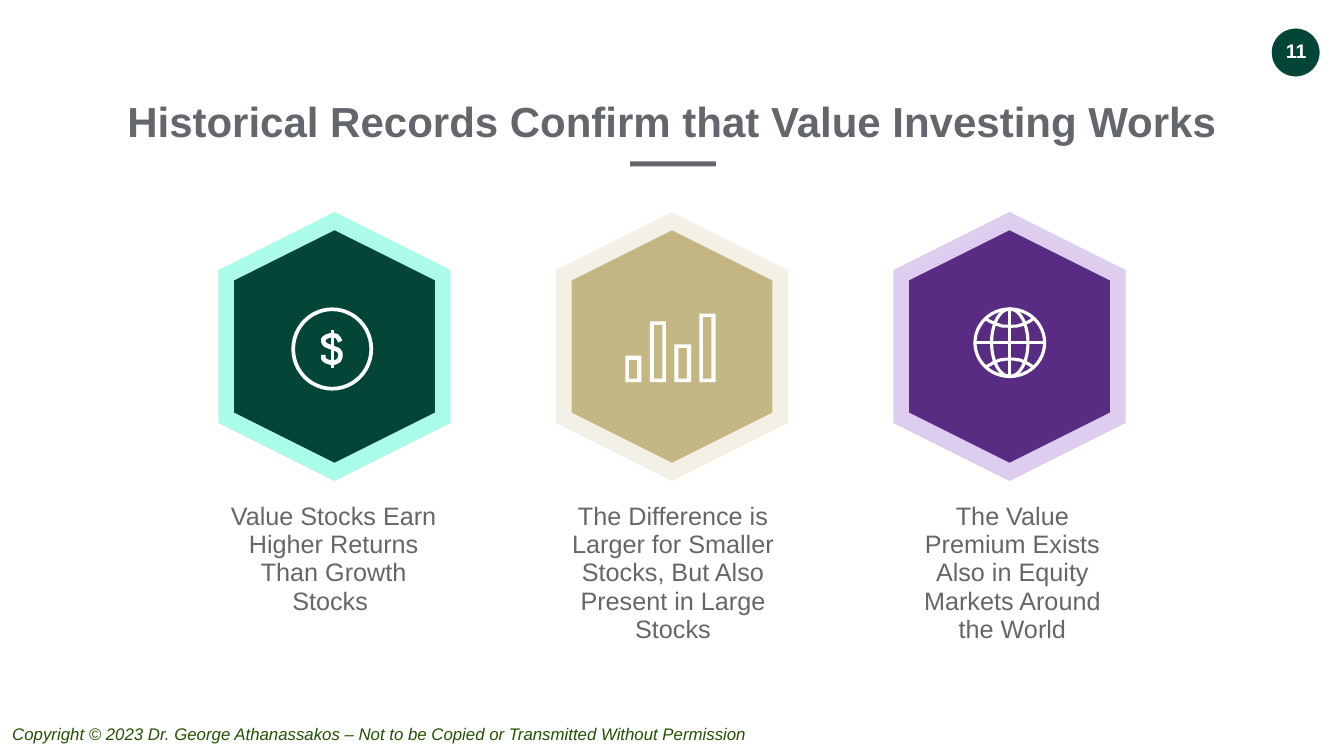
from dataclasses import dataclass
from lxml import etree
from pptx import Presentation
from pptx.dml.color import RGBColor
from pptx.enum.shapes import MSO_CONNECTOR, MSO_SHAPE
from pptx.enum.text import PP_ALIGN
from pptx.oxml.ns import qn
from pptx.util import Pt


@dataclass(frozen=True)
class Theme:
    font: str = "Arial"
    gray: str = "63666A"
    green: str = "034638"
    white: str = "FFFFFF"
    footer: str = "235001"
    title_size: int = 60
    body_size: int = 36
    number_size: int = 28
    footer_size: int = 24


THEME = Theme()

# Content
TITLE = "Historical Records Confirm that Value Investing Works"
PAGE_NUMBER = "11"
FOOTER = ("Copyright © 2023 Dr. George Athanassakos – "
          "Not to be Copied or Transmitted Without Permission")
# (caption, hexagon colour, border colour)
COLUMNS = [
    ("Value Stocks Earn Higher Returns Than Growth Stocks ", THEME.green, "ABFBEB"),
    ("The Difference is Larger for Smaller Stocks, But Also Present in Large Stocks",
     "C5B783", "F3F1E6"),
    ("The Value Premium Exists Also in Equity Markets Around the World",
     "582C83", "DECDEE"),
]

# Layout in points
SLIDE_WIDTH, SLIDE_HEIGHT = 1919.5, 1080
MIDDLE = SLIDE_WIDTH / 2
HEXAGON_PITCH, HEXAGON_CENTER_Y = 482, 495
OUTER_HEXAGON, INNER_HEXAGON = (384.5, 332), (332, 286.5)  # before rotation
CAPTION_PITCH, CAPTION_MIDDLE, CAPTION_TOP = 484.7, 961.2, 708.5
CAPTION_WIDTH, CAPTION_HEIGHT = 343.5, 219.5

# Icon geometry in points
BAR_TOPS, BAR_BOTTOM = [508.3, 458.6, 491.8, 447.8], 546.5
BAR_LEFT, BAR_PITCH, BAR_WIDTH, BAR_STROKE = 892.8, 35.3, 23.3, 5.6
DOLLAR_CURVE = [  # offsets from the coin centre
    (11, -11), (10, -15), (6.5, -18.5), (2, -20), (-3, -20), (-8.5, -18),
    (-12, -14.5), (-12, -10), (-9.5, -6), (-4, -3.5), (3, -1), (8.5, 1.5),
    (11.7, 5.5), (11.7, 11), (9, 16), (4, 19), (-2, 19.5), (-8, 17.5),
    (-12, 14), (-12.7, 8.5)]

presentation = Presentation()
presentation.slide_width = Pt(SLIDE_WIDTH)
presentation.slide_height = Pt(SLIDE_HEIGHT)
slide = presentation.slides.add_slide(presentation.slide_layouts[6])
shapes = slide.shapes


def paint(shape, fill=None, stroke=None, weight=1):
    shape.shadow.inherit = False
    if fill:
        shape.fill.solid()
        shape.fill.fore_color.rgb = RGBColor.from_string(fill)
    else:
        shape.fill.background()
    if stroke:
        shape.line.color.rgb = RGBColor.from_string(stroke)
        shape.line.width = Pt(weight)
    else:
        shape.line.fill.background()


def add_centered(kind, center_x, center_y, width, height, **style):
    shape = shapes.add_shape(kind, Pt(center_x - width / 2), Pt(center_y - height / 2),
                             Pt(width), Pt(height))
    paint(shape, **style)
    return shape


def add_line(x1, y1, x2, y2, weight):
    line = shapes.add_connector(MSO_CONNECTOR.STRAIGHT, Pt(x1), Pt(y1), Pt(x2), Pt(y2))
    line.line.color.rgb = RGBColor.from_string(THEME.white)
    line.line.width = Pt(weight)
    etree.SubElement(line._element.spPr, qn("a:effectLst"))


def add_outline(contours, close=False, **style):
    builder = shapes.build_freeform(*contours[0][0], scale=float(Pt(1)))
    for index, points in enumerate(contours):
        if index:
            builder.move_to(*points[0])
        builder.add_line_segments(points[1:], close=close)
    paint(builder.convert_to_shape(), **style)


def add_text(text, box, size, color, align=PP_ALIGN.CENTER, insets=(7.2, 3.6),
             wrap=True, bold=False, italic=False, spacing=None):
    frame = shapes.add_textbox(*map(Pt, box)).text_frame
    frame.word_wrap = wrap
    frame.margin_left = frame.margin_right = Pt(insets[0])
    frame.margin_top = frame.margin_bottom = Pt(insets[1])
    frame.text = text
    paragraph = frame.paragraphs[0]
    paragraph.alignment = align
    if spacing:
        paragraph.line_spacing = Pt(spacing)
    font = paragraph.runs[0].font
    font.name, font.size = THEME.font, Pt(size)
    font.bold, font.italic = bold, italic
    font.color.rgb = RGBColor.from_string(color)


def draw_coin():
    x, y = 474.5, 498.6
    add_centered(MSO_SHAPE.OVAL, x, y, 111.5, 113.5, stroke=THEME.white, weight=5.3)
    add_outline([[(x + dx, y + dy) for dx, dy in DOLLAR_CURVE]],
                stroke=THEME.white, weight=6.5)
    add_line(x, y - 27, x, y + 27, 3.8)


def draw_bars():
    contours = []
    for index, top in enumerate(BAR_TOPS):
        for inset in (0, BAR_STROKE):  # outer edge, then the hole
            left = BAR_LEFT + BAR_PITCH * index + inset
            right = left + BAR_WIDTH - 2 * inset
            upper, lower = top + inset, BAR_BOTTOM - inset
            contours.append([(left, upper), (right, upper), (right, lower), (left, lower)])
    add_outline(contours, close=True, fill=THEME.white)


def draw_globe():
    x, y, width, height, weight = 1442.2, 489.6, 99.5, 96.5, 4.5
    for part in (width, 52):  # outline and meridian
        add_centered(MSO_SHAPE.OVAL, x, y, part, height, stroke=THEME.white, weight=weight)
    add_line(x - width / 2, y, x + width / 2, y, weight)
    add_line(x, y - height / 2, x, y + height / 2, weight)
    for side in (-1, 1):  # parallels
        add_outline([[(x + 3.3 * step, y + side * (23 + 11 * (step / 10) ** 2))
                      for step in range(-10, 11)]], stroke=THEME.white, weight=weight)


# Page number
add_centered(MSO_SHAPE.OVAL, 1850.5, 75, 67.7, 67.7,
             fill=THEME.green, stroke=THEME.green, weight=0.5)
add_text(PAGE_NUMBER, (1819.5, 48.3, 63.4, 48.2), THEME.number_size, THEME.white,
         insets=(14.4, 7.2), wrap=False, bold=True)

# Title and rule
add_text(TITLE, (167, 133.2, 1585.5, 80), THEME.title_size, THEME.gray,
         wrap=False, bold=True)
add_centered(MSO_SHAPE.RECTANGLE, 961.2, 234, 122.4, 7.2, fill=THEME.gray)

# Hexagons and captions
for position, (caption, color, border) in enumerate(COLUMNS, start=-1):
    for size, fill in ((OUTER_HEXAGON, border), (INNER_HEXAGON, color)):
        hexagon = add_centered(MSO_SHAPE.HEXAGON, MIDDLE + position * HEXAGON_PITCH,
                               HEXAGON_CENTER_Y, *size, fill=fill)
        hexagon.rotation = 90
    left = CAPTION_MIDDLE + position * CAPTION_PITCH - CAPTION_WIDTH / 2
    add_text(caption, (left, CAPTION_TOP, CAPTION_WIDTH, CAPTION_HEIGHT),
             THEME.body_size, THEME.gray, insets=(17.3, 8.6), spacing=40.4)

# Icons
draw_coin()
draw_bars()
draw_globe()

# Footer
add_text(FOOTER, (3.6, 1030.3, 1088.6, 36), THEME.footer_size, THEME.footer,
         align=PP_ALIGN.LEFT, insets=(13.9, 3.6), italic=True)

presentation.save("out.pptx")
